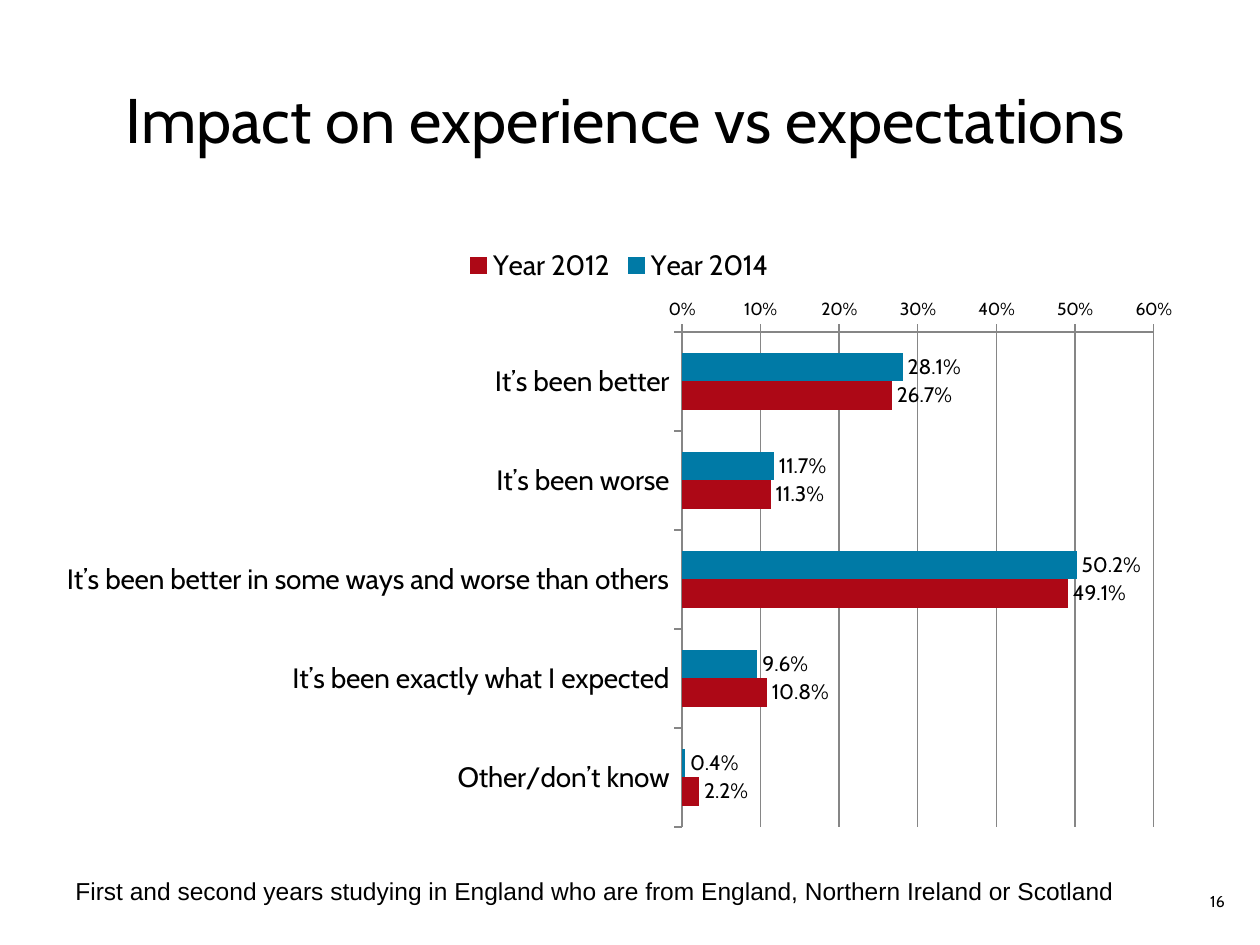
"""Build a slide comparing student experience with expectations in 2012 and 2014."""
from dataclasses import dataclass

from pptx import Presentation
from pptx import util as u
from pptx.chart import data as chart_data
from pptx.chart.axis import _BaseAxis
from pptx.chart.chart import Chart
from pptx.dml.color import RGBColor
from pptx.enum import chart as charts, text
from pptx.oxml import parse_xml
from pptx.oxml.ns import nsdecls
from pptx.slide import Slide

BLACK = RGBColor(0x00, 0x00, 0x00)
GREY = RGBColor(0x86, 0x86, 0x86)
BLUE = RGBColor(0x00, 0x7A, 0xA6)
RED = RGBColor(0xAD, 0x08, 0x16)
FONT = "Cabin"


@dataclass(frozen=True)
class Frame:
    """A rectangle in points."""

    left: float
    top: float
    width: float
    height: float

    def lengths(self) -> tuple:
        """Return the four sides as slide lengths."""
        return tuple(u.Pt(side) for side in (self.left, self.top, self.width, self.height))


@dataclass(frozen=True)
class YearSeries:
    """Answer shares for one survey year."""

    name: str
    shares: tuple
    color: RGBColor


ANSWERS = (
    "It’s been better",
    "It’s been worse",
    "It’s been better in some ways and worse than others",
    "It’s been exactly what I expected",
    "Other/don’t know",
)
YEARS = (
    YearSeries("Year 2014", (0.281, 0.117, 0.502, 0.096, 0.004), BLUE),
    YearSeries("Year 2012", (0.267, 0.113, 0.491, 0.108, 0.022), RED),
)
PLOT_SHARES = {"x": 0.5545, "y": 0.1615, "w": 0.41, "h": 0.8185}


def add_text(slide: Slide, frame: Frame, words: str, *, size: float, font: str = FONT,
             align=text.PP_ALIGN.LEFT, anchor=text.MSO_ANCHOR.TOP, right_inset: float = 7.2) -> None:
    """Add one formatted line of text."""
    box = slide.shapes.add_textbox(*frame.lengths())
    body = box.text_frame
    body.word_wrap = True
    body.vertical_anchor = anchor
    body.margin_right = u.Pt(right_inset)
    para = body.paragraphs[0]
    para.alignment = align
    span = para.add_run()
    span.text = words
    span.font.name = font
    span.font.size = u.Pt(size)
    span.font.color.rgb = BLACK


def style_axis(axis: _BaseAxis, size: float) -> None:
    """Give an axis its line, ticks and label size."""
    axis.major_tick_mark = charts.XL_TICK_MARK.OUTSIDE
    axis.minor_tick_mark = charts.XL_TICK_MARK.NONE
    axis.format.line.color.rgb = GREY
    axis.format.line.width = u.Pt(0.75)
    axis.tick_labels.font.size = u.Pt(size)


def place_plot(chart: Chart) -> None:
    """Fix the inner plot area inside the chart."""
    area = chart.element.chart.plotArea
    for layout in area.xpath("c:layout"):
        area.remove(layout)
    modes = "".join(f'<c:{side}Mode val="edge"/>' for side in "xy")
    sides = "".join(f'<c:{side} val="{share}"/>' for side, share in PLOT_SHARES.items())
    area.insert(0, parse_xml(
        f'<c:layout {nsdecls("c")}><c:manualLayout><c:layoutTarget val="inner"/>'
        f"{modes}{sides}</c:manualLayout></c:layout>"))


def add_bar_chart(slide: Slide, frame: Frame) -> None:
    """Add the clustered bars for both years."""
    content = chart_data.CategoryChartData(number_format="0.0%")
    content.categories = ANSWERS
    for year in YEARS:
        content.add_series(year.name, year.shares)
    chart = slide.shapes.add_chart(
        charts.XL_CHART_TYPE.BAR_CLUSTERED, *frame.lengths(), content).chart
    chart.has_title = False
    chart.font.name = FONT
    chart.font.size = u.Pt(10)
    chart.font.color.rgb = BLACK
    chart.has_legend = True
    chart.legend.position = charts.XL_LEGEND_POSITION.TOP
    chart.legend.include_in_layout = False
    chart.legend.font.size = u.Pt(16)

    style_axis(chart.category_axis, 16)
    chart.category_axis.reverse_order = True
    scale = chart.value_axis
    style_axis(scale, 10)
    scale.minimum_scale, scale.maximum_scale, scale.major_unit = 0, 0.6, 0.1
    scale.tick_labels.number_format = "0%"
    scale.tick_labels.number_format_is_linked = False
    scale.has_major_gridlines = True
    scale.major_gridlines.format.line.color.rgb = GREY
    scale.major_gridlines.format.line.width = u.Pt(0.75)

    plot = chart.plots[0]
    plot.gap_width = 150
    plot.vary_by_categories = False
    for bars, year in zip(plot.series, YEARS):
        bars.invert_if_negative = False
        bars.format.fill.solid()
        bars.format.fill.fore_color.rgb = year.color
        labels = bars.data_labels
        labels.show_value = True
        labels.number_format = "###0.0%"
        labels.number_format_is_linked = False
        labels.position = charts.XL_LABEL_POSITION.OUTSIDE_END
        labels.font.size = u.Pt(12)
    place_plot(chart)


def main() -> None:
    """Create and save the deck."""
    deck = Presentation()
    deck.slide_width, deck.slide_height = u.Pt(720), u.Pt(540)
    page = deck.slides.add_slide(deck.slide_layouts[6])
    add_text(page, Frame(666, 500.4, 33.84, 28.8), "16", size=9, right_inset=0,
             align=text.PP_ALIGN.RIGHT, anchor=text.MSO_ANCHOR.MIDDLE)
    add_text(page, Frame(64.8, 37.44, 646.56, 55.44), "Impact on experience vs expectations",
             size=36, anchor=text.MSO_ANCHOR.BOTTOM)
    add_text(page, Frame(36, 496.8, 635, 24.5),
             "First and second years studying in England who are from England, "
             "Northern Ireland or Scotland", size=14, font="Arial")
    add_bar_chart(page, Frame(25.2, 133.9, 657.4, 345.6))
    deck.save("out.pptx")


if __name__ == "__main__":
    main()
